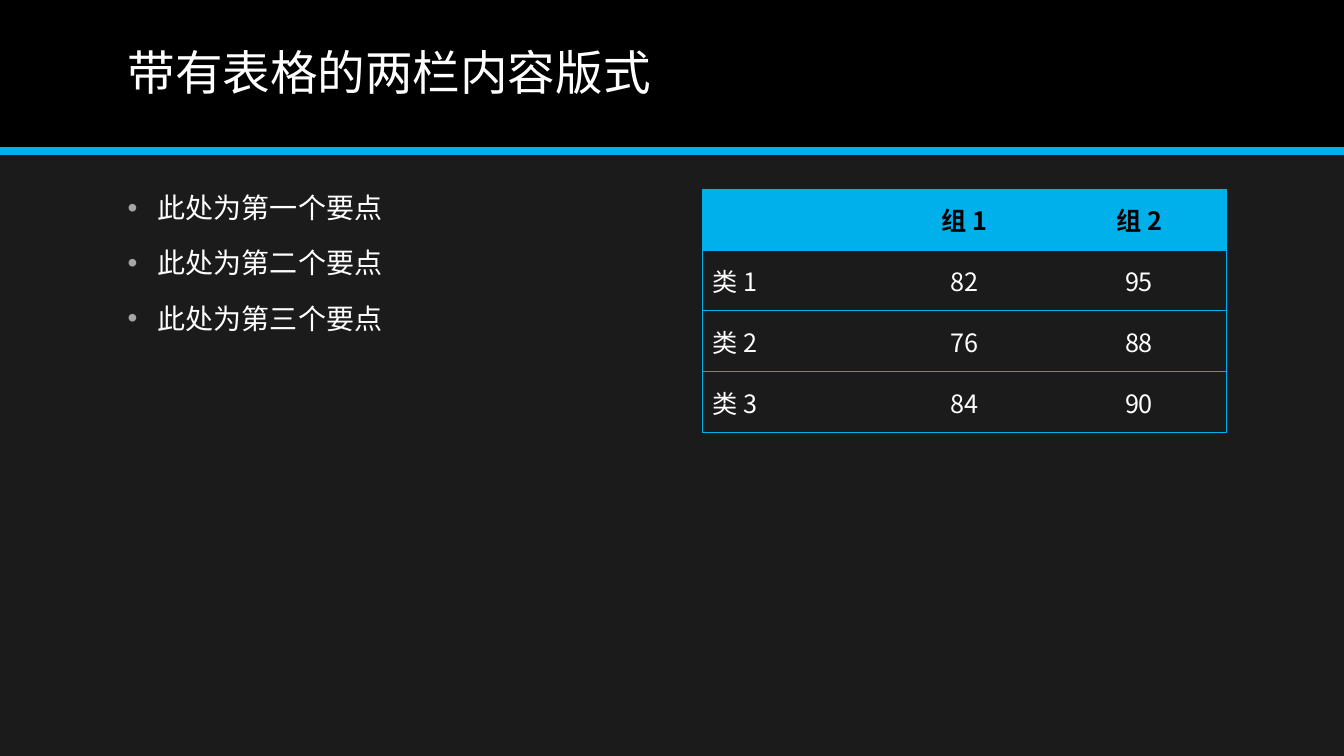
import dataclasses

import lxml.etree
import pptx
import pptx.dml.color
import pptx.enum.lang
import pptx.enum.shapes
import pptx.enum.text
import pptx.oxml.ns
import pptx.util

SLIDE_WIDTH = pptx.util.Inches(13.33)
SLIDE_HEIGHT = pptx.util.Inches(7.5)
COLUMNS, ROWS = 160, 90
ALIGN = pptx.enum.text.PP_ALIGN
MIDDLE = pptx.enum.text.MSO_ANCHOR.MIDDLE

TITLE = "带有表格的两栏内容版式"
POINTS = ["此处为第一个要点", "此处为第二个要点", "此处为第三个要点"]
SCORES = [
    ["", "组 1", "组 2"],
    ["类 1", "82", "95"],
    ["类 2", "76", "88"],
    ["类 3", "84", "90"],
]


@dataclasses.dataclass(frozen=True)
class Theme:
    """Colours, font and type sizes of the slide."""

    background: str = "1B1B1B"
    band: str = "000000"
    accent: str = "00B0EA"
    text: str = "FFFFFF"
    bullet: str = "A6A6A6"
    font: str = "Noto Sans CJK SC"
    title_size: int = 34
    body_size: int = 20
    table_size: int = 18
    rule_width: float = 6
    border_width: float = 0.5


THEME = Theme()


def across(columns):
    """Return the width of a number of grid columns."""
    return round(SLIDE_WIDTH * columns / COLUMNS)


def down(rows):
    """Return the height of a number of grid rows."""
    return round(SLIDE_HEIGHT * rows / ROWS)


def area(left, top, width, height):
    """Return a grid area as lengths."""
    return across(left), down(top), across(width), down(height)


def rgb(colour):
    """Return a colour object for a hex code."""
    return pptx.dml.color.RGBColor.from_string(colour)


def add_element(parent, tag, **attributes):
    """Append a drawing element and return it."""
    element = lxml.etree.SubElement(parent, pptx.oxml.ns.qn(tag))
    for name, value in attributes.items():
        element.set(name, str(value))
    return element


def add_colour(parent, colour):
    """Append a colour element."""
    add_element(parent, "a:srgbClr", val=colour)


def add_run(paragraph, text, size, colour, bold=False):
    """Add one formatted run."""
    run = paragraph.add_run()
    run.text = text
    font = run.font
    font.name = THEME.font
    font.size = pptx.util.Pt(size)
    font.bold = bold
    font.color.rgb = rgb(colour)
    font.language_id = pptx.enum.lang.MSO_LANGUAGE_ID.SIMPLIFIED_CHINESE
    add_element(run._r.get_or_add_rPr(), "a:ea", typeface=THEME.font)


def add_text_frame(slide, place):
    """Add a wrapping text box and return its frame."""
    frame = slide.shapes.add_textbox(*area(*place)).text_frame
    frame.word_wrap = True
    return frame


def add_header(slide, height):
    """Add the dark title band and the rule below it."""
    band = slide.shapes.add_shape(
        pptx.enum.shapes.MSO_SHAPE.RECTANGLE, *area(0, 0, COLUMNS, height)
    )
    band.shadow.inherit = False
    band.fill.solid()
    band.fill.fore_color.rgb = rgb(THEME.band)
    band.line.fill.background()
    rule = slide.shapes.add_connector(
        pptx.enum.shapes.MSO_CONNECTOR.STRAIGHT,
        0, down(height), SLIDE_WIDTH, down(height),
    )
    rule.line.color.rgb = rgb(THEME.accent)
    rule.line.width = pptx.util.Pt(THEME.rule_width)
    add_element(rule._element.spPr, "a:effectLst")


def add_title(slide, place, text):
    """Add the slide title."""
    frame = add_text_frame(slide, place)
    frame.vertical_anchor = MIDDLE
    paragraph = frame.paragraphs[0]
    paragraph.line_spacing = 0.9
    add_run(paragraph, text, THEME.title_size, THEME.text)


def add_bullets(slide, place, points):
    """Add a bulleted list."""
    frame = add_text_frame(slide, place)
    indent = pptx.util.Inches(0.3)
    for index, point in enumerate(points):
        paragraph = frame.add_paragraph() if index else frame.paragraphs[0]
        paragraph.line_spacing = 0.9
        paragraph.space_before = pptx.util.Pt(18)
        properties = paragraph._p.get_or_add_pPr()
        properties.set("marL", str(indent))
        properties.set("indent", str(-indent))
        add_colour(add_element(properties, "a:buClr"), THEME.bullet)
        add_element(properties, "a:buFont", typeface="Arial")
        add_element(properties, "a:buChar", char="•")
        add_run(paragraph, point, THEME.body_size, THEME.text)


def set_borders(cell, visible):
    """Draw the visible sides of a cell and clear the others."""
    properties = cell._tc.get_or_add_tcPr()
    for side in "LRTB":
        line = add_element(
            properties, f"a:ln{side}", w=pptx.util.Pt(THEME.border_width)
        )
        if side in visible:
            add_colour(add_element(line, "a:solidFill"), THEME.accent)
        else:
            add_element(line, "a:noFill")


def format_cell(cell, text, is_header, is_first, is_last):
    """Fill in one table cell."""
    set_borders(cell, "TB" + "L" * is_first + "R" * is_last)
    if is_header:
        cell.fill.solid()
        cell.fill.fore_color.rgb = rgb(THEME.accent)
    else:
        cell.fill.background()
    cell.vertical_anchor = MIDDLE
    paragraph = cell.text_frame.paragraphs[0]
    paragraph.alignment = ALIGN.LEFT if is_first else ALIGN.CENTER
    if text:
        colour = THEME.band if is_header else THEME.text
        add_run(paragraph, text, THEME.table_size, colour, is_header)


def add_score_table(slide, place, records):
    """Add the table with equal columns and rows."""
    width = len(records[0])
    table = slide.shapes.add_table(len(records), width, *area(*place)).table
    table.horz_banding = False
    for row, record in enumerate(records):
        for column, text in enumerate(record):
            format_cell(
                table.cell(row, column), text,
                row == 0, column == 0, column == width - 1,
            )


def main():
    """Build and save the slide."""
    presentation = pptx.Presentation()
    presentation.slide_width = SLIDE_WIDTH
    presentation.slide_height = SLIDE_HEIGHT
    slide = presentation.slides.add_slide(presentation.slide_layouts[6])
    slide.background.fill.solid()
    slide.background.fill.fore_color.rgb = rgb(THEME.background)
    add_header(slide, 18)
    add_title(slide, (14, 1.7, 132, 14.4), TITLE)
    add_bullets(slide, (14, 22.5, 62.4, 58.5), POINTS)
    add_score_table(slide, (83.6, 22.5, 62.4, 29), SCORES)
    presentation.save("out.pptx")


if __name__ == "__main__":
    main()
